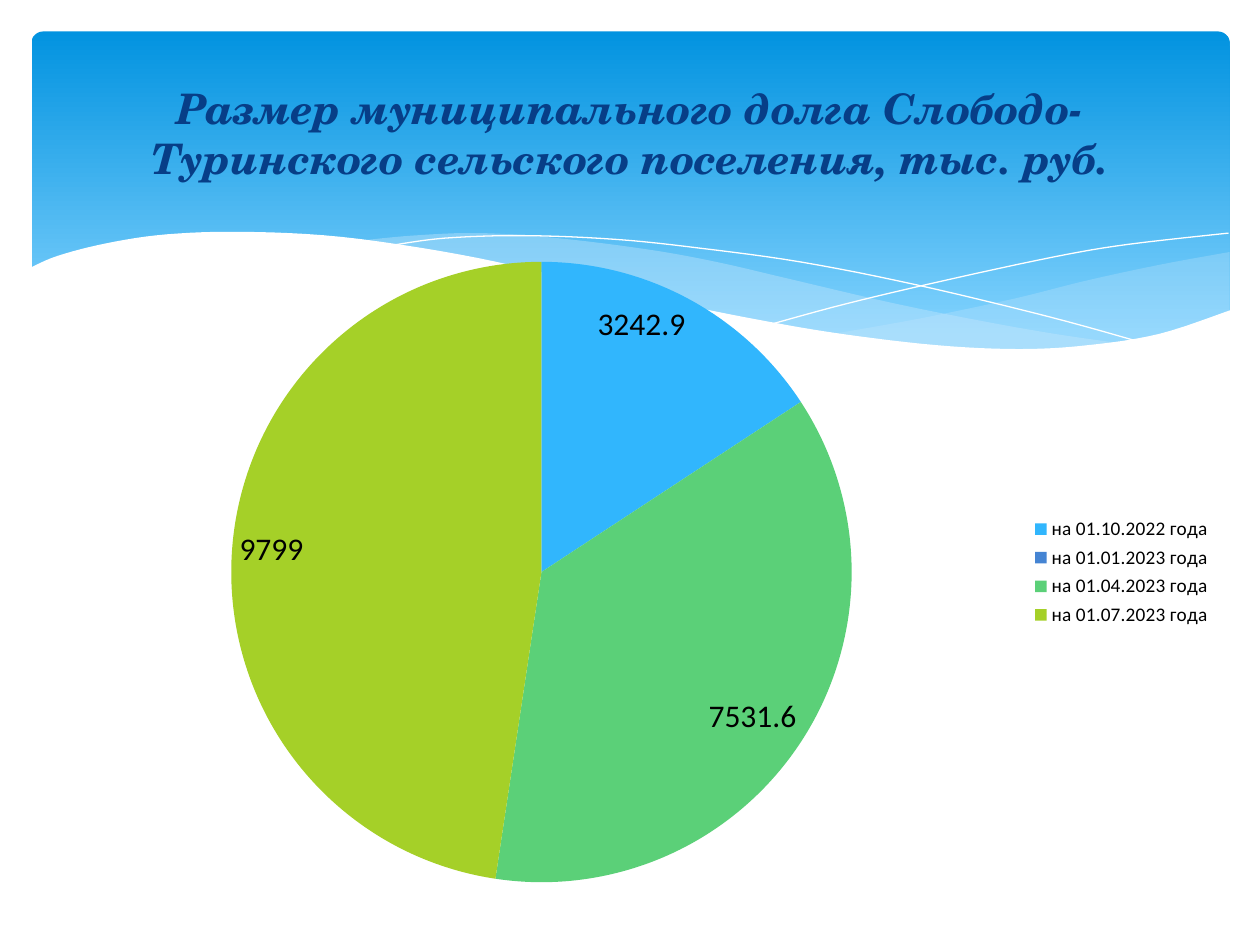
from dataclasses import dataclass

from lxml import etree
from pptx import Presentation
from pptx.chart.data import CategoryChartData
from pptx.dml.color import RGBColor
from pptx.enum.chart import XL_CHART_TYPE, XL_LABEL_POSITION, XL_LEGEND_POSITION
from pptx.enum.shapes import MSO_SHAPE
from pptx.enum.text import MSO_ANCHOR, MSO_AUTO_SIZE, PP_ALIGN
from pptx.oxml.ns import qn
from pptx.util import Inches, Pt

PIE = XL_CHART_TYPE.PIE
INSIDE_END = XL_LABEL_POSITION.INSIDE_END
LEGEND_RIGHT = XL_LEGEND_POSITION.RIGHT
ROUNDED_RECTANGLE = MSO_SHAPE.ROUNDED_RECTANGLE
MIDDLE = MSO_ANCHOR.MIDDLE
NO_AUTOFIT = MSO_AUTO_SIZE.NONE
CENTER = PP_ALIGN.CENTER
TITLE_ONLY = 5


@dataclass(frozen=True)
class Theme:
    title_font: str = "TeX Gyre Schola"
    body_font: str = "Calibri"
    title_size: int = 24
    label_size: int = 18
    legend_size: int = 11
    title_color: str = "073E87"
    text_color: str = "000000"
    white: str = "FFFFFF"
    banner_top: str = "0293E0"
    banner_bottom: str = "83D3FE"
    ribbon: str = "C6E7FC"
    slices: tuple = ("31B6FD", "4584D3", "5BD078", "A5D028")


THEME = Theme()
TITLE = "Размер муниципального долга Слободо-Туринского сельского поселения, тыс. руб."
DEBT = {
    "на 01.10.2022 года": 3242.9,
    "на 01.01.2023 года": 0,
    "на 01.04.2023 года": 7531.6,
    "на 01.07.2023 года": 9799,
}
EXPLOSION = 25

RIGHT_RIBBON_TOP = [(6.61, 2.65), (7.29, 2.53), (8.05, 2.37), (8.61, 2.23), (9.21, 2.1), (9.76, 2)]
RIGHT_RIBBON_BOTTOM = [(9.76, 2.47), (9.35, 2.62), (8.89, 2.72), (8.44, 2.77), (8.03, 2.78),
                       (7.57, 2.76), (7.05, 2.71), (6.61, 2.65)]
LEFT_RIBBON_TOP = [(2.86, 1.91), (3.28, 1.87), (3.8, 1.85), (4.42, 1.89), (5.14, 1.98),
                   (5.69, 2.08), (6.29, 2.22), (7.06, 2.4), (7.75, 2.54), (8.37, 2.65), (8.93, 2.73)]
LEFT_RIBBON_BOTTOM = [(8.93, 2.73), (8.48, 2.77), (7.96, 2.78), (7.36, 2.75), (6.65, 2.66),
                      (5.84, 2.52), (5.3, 2.4), (4.49, 2.22), (3.83, 2.07), (3.23, 1.96), (2.86, 1.91)]
FALLING_LINE = [(3.09, 1.95), (3.53, 1.89), (4.16, 1.87), (4.89, 1.9), (5.56, 1.97),
                (6.36, 2.08), (7.27, 2.26), (8.31, 2.51), (9.07, 2.72)]
RISING_LINE = [(6.13, 2.57), (6.72, 2.41), (7.48, 2.23), (8.36, 2.04), (8.95, 1.94), (9.75, 1.85)]
WAVE_TOP = [(0.23, 2.13), (0.46, 2.03), (0.85, 1.93), (1.32, 1.86), (1.93, 1.84), (2.71, 1.88),
            (3.65, 2.02), (4.47, 2.2), (5.29, 2.39), (6.03, 2.54), (6.68, 2.65), (7.44, 2.74),
            (8.09, 2.77), (8.63, 2.74), (9.2, 2.65), (9.77, 2.46)]
WAVE_BASE = [(9.77, 3.29), (0.23, 3.29)]


def rgb(color):
    return RGBColor.from_string(color)


def smooth_curve(knots, steps=6):
    padded = [knots[0], *knots, knots[-1]]
    points = [knots[0]]
    for a, b, c, d in zip(padded, padded[1:], padded[2:], padded[3:]):
        for step in range(1, steps + 1):
            t = step / steps
            points.append(tuple(
                q + (r - p) * t / 2
                + (2 * p - 5 * q + 4 * r - s) * t ** 2 / 2
                + (3 * q - p - 3 * r + s) * t ** 3 / 2
                for p, q, r, s in zip(a, b, c, d)
            ))
    return points


def add_freeform(slide, points, close):
    vertices = [(Inches(x), Inches(y)) for x, y in points]
    builder = slide.shapes.build_freeform(*vertices[0], scale=1.0)
    builder.add_line_segments(vertices[1:], close=close)
    shape = builder.convert_to_shape()
    shape.shadow.inherit = False
    return shape


def add_area(slide, points, color, opacity=100):
    shape = add_freeform(slide, points, True)
    shape.fill.solid()
    shape.fill.fore_color.rgb = rgb(color)
    shape.line.fill.background()
    if opacity < 100:
        color_element = shape.element.spPr.find(f"{qn('a:solidFill')}/{qn('a:srgbClr')}")
        etree.SubElement(color_element, qn("a:alpha"), val=str(opacity * 1000))


def add_curve(slide, knots):
    shape = add_freeform(slide, smooth_curve(knots), False)
    shape.fill.background()
    shape.line.color.rgb = rgb(THEME.white)
    shape.line.width = Pt(0)


def add_banner(slide):
    banner = slide.shapes.add_shape(
        ROUNDED_RECTANGLE, Inches(0.25), Inches(0.25), Inches(9.51), Inches(2.7))
    banner.adjustments[0] = 0.034
    banner.shadow.inherit = False
    banner.line.fill.background()
    banner.fill.gradient()
    banner.fill.gradient_angle = 270
    stops = ((0, THEME.banner_top), (0.9, THEME.banner_bottom))
    for stop, (position, color) in zip(banner.fill.gradient_stops, stops):
        stop.position = position
        stop.color.rgb = rgb(color)


def add_waves(slide):
    add_area(slide, smooth_curve(RIGHT_RIBBON_TOP) + smooth_curve(RIGHT_RIBBON_BOTTOM),
             THEME.ribbon, 29)
    add_area(slide, smooth_curve(LEFT_RIBBON_TOP) + smooth_curve(LEFT_RIBBON_BOTTOM),
             THEME.ribbon, 40)
    add_curve(slide, FALLING_LINE)
    add_curve(slide, RISING_LINE)
    add_area(slide, smooth_curve(WAVE_TOP) + WAVE_BASE, THEME.white)


def style_font(font, name, size, color):
    font.name = name
    font.size = Pt(size)
    font.color.rgb = rgb(color)


def explode_slices(series):
    explosion = etree.Element(qn("c:explosion"), val=str(EXPLOSION))
    series.format.fill.solid()
    series.format.fill.fore_color.rgb = rgb(THEME.slices[0])
    series.format.element.addnext(explosion) if hasattr(series.format, "element") else \
        series._element.find(qn("c:spPr")).addnext(explosion)


def hide_label(labels, index):
    label = etree.Element(qn("c:dLbl"))
    etree.SubElement(label, qn("c:idx"), val=str(index))
    etree.SubElement(label, qn("c:delete"), val="1")
    labels._element.insert(0, label)


def add_debt_chart(slide):
    chart_data = CategoryChartData()
    chart_data.categories = list(DEBT)
    chart_data.add_series("Series 1", list(DEBT.values()))
    chart = slide.shapes.add_chart(
        PIE, Inches(0.43), Inches(1.94), Inches(9.29), Inches(5.2), chart_data).chart
    chart.has_title = False
    style_font(chart.font, THEME.body_font, THEME.label_size, THEME.text_color)
    chart.has_legend = True
    chart.legend.position = LEGEND_RIGHT
    chart.legend.include_in_layout = False
    style_font(chart.legend.font, THEME.body_font, THEME.legend_size, THEME.text_color)

    plot = chart.plots[0]
    plot.vary_by_categories = True
    series = plot.series[0]
    explode_slices(series)
    for index, color in enumerate(THEME.slices):
        fill = series.points[index].format.fill
        fill.solid()
        fill.fore_color.rgb = rgb(color)
    labels = series.data_labels
    labels.show_value = True
    labels.position = INSIDE_END
    style_font(labels.font, THEME.body_font, THEME.label_size, THEME.text_color)
    hide_label(labels, list(DEBT.values()).index(0))


def add_title(slide):
    title = slide.shapes.title
    title.left, title.top = Inches(0.5), Inches(0.37)
    title.width, title.height = Inches(9), Inches(1.37)
    frame = title.text_frame
    frame.word_wrap = True
    frame.auto_size = NO_AUTOFIT
    frame.vertical_anchor = MIDDLE
    paragraph = frame.paragraphs[0]
    paragraph.alignment = CENTER
    run = paragraph.add_run()
    run.text = TITLE
    style_font(run.font, THEME.title_font, THEME.title_size, THEME.title_color)
    run.font.bold = run.font.italic = True
    title.element.getparent().append(title.element)


def main():
    presentation = Presentation()
    presentation.slide_width, presentation.slide_height = Inches(10), Inches(7.5)
    slide = presentation.slides.add_slide(presentation.slide_layouts[TITLE_ONLY])
    add_banner(slide)
    add_waves(slide)
    add_debt_chart(slide)
    add_title(slide)
    presentation.save("out.pptx")


if __name__ == "__main__":
    main()
